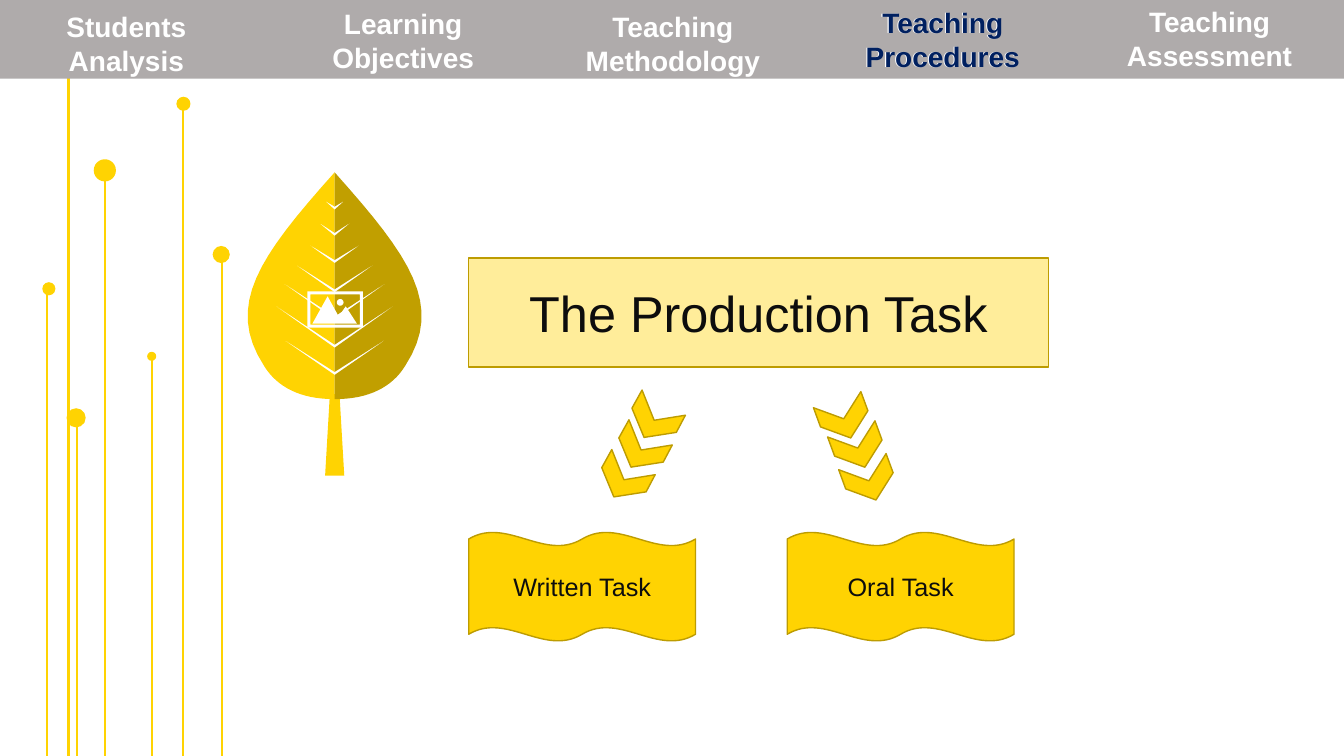
from collections import namedtuple
from math import cos, pi, sin

from lxml import etree
from pptx import Presentation
from pptx.dml.color import RGBColor
from pptx.enum.shapes import MSO_CONNECTOR, MSO_SHAPE
from pptx.enum.text import MSO_ANCHOR, MSO_AUTO_SIZE, PP_ALIGN
from pptx.oxml.ns import qn
from pptx.util import Inches, Pt

STRAIGHT = MSO_CONNECTOR.STRAIGHT
OVAL, BAR = MSO_SHAPE.OVAL, MSO_SHAPE.RECTANGLE
WAVE, STALK = MSO_SHAPE.DOUBLE_WAVE, MSO_SHAPE.TRAPEZOID
CENTER = PP_ALIGN.CENTER
TOP, MIDDLE = MSO_ANCHOR.TOP, MSO_ANCHOR.MIDDLE
NO_FIT = MSO_AUTO_SIZE.NONE

SLIDE_W, SLIDE_H = Inches(13.333), Inches(7.5)
ROWS = 750
UNIT = SLIDE_H / ROWS
COLUMNS = SLIDE_W / UNIT
TITLE_ONLY = 5

YELLOW, DARK_YELLOW, OUTLINE, CREAM = "FFD302", "C19F00", "BD9C01", "FFED9A"
GRAY, WHITE, NAVY, INK = "AFABAB", "FFFFFF", "002060", "0D0D0D"

Box = namedtuple("Box", "left top width height")


def rgb(value):
    return RGBColor.from_string(value)


def emu(*lengths):
    return [round(length * UNIT) for length in lengths]


def paint(shape, fill, line=None):
    shape.fill.solid()
    shape.fill.fore_color.rgb = rgb(fill)
    if line:
        shape.line.color.rgb = rgb(line)
        shape.line.width = Pt(1)
    else:
        shape.line.fill.background()


def write(frame, text, size=18, color=INK, bold=False, anchor=MIDDLE):
    frame.word_wrap = True
    frame.auto_size = NO_FIT
    frame.vertical_anchor = anchor
    frame.text = text
    for paragraph in frame.paragraphs:
        paragraph.alignment = CENTER
        paragraph.font.size = Pt(size)
        paragraph.font.name = "Arial"
        paragraph.font.bold = bold
        paragraph.font.color.rgb = rgb(color)


def add_preset(slide, kind, box, fill, line=None):
    shape = slide.shapes.add_shape(kind, *emu(*box))
    shape.shadow.inherit = False
    paint(shape, fill, line)
    return shape


def add_outline(slide, contours, fill, line=None):
    scaled = [[emu(*point) for point in contour] for contour in contours]
    builder = slide.shapes.build_freeform(*scaled[0][0], scale=1.0)
    for index, (start, *rest) in enumerate(scaled):
        if index:
            builder.move_to(*start)
        builder.add_line_segments(rest, close=True)
    shape = builder.convert_to_shape()
    shape.shadow.inherit = False
    paint(shape, fill, line)


def curve(a, b, c, d, steps=16):
    points = []
    for step in range(1, steps + 1):
        t = step / steps
        weights = (1 - t) ** 3, 3 * t * (1 - t) ** 2, 3 * t * t * (1 - t), t ** 3
        points.append(tuple(sum(w * p[axis] for w, p in zip(weights, (a, b, c, d)))
                            for axis in (0, 1)))
    return points


def shift(points, x, y, side=1):
    return [(x + side * px, y + py) for px, py in points]


def add_stem(slide, x, top, bottom):
    stem = slide.shapes.add_connector(STRAIGHT, *emu(x, top, x, bottom))
    stem.line.color.rgb = rgb(YELLOW)
    stem.line.width = Pt(1.5)
    etree.SubElement(stem._element.spPr, qn("a:effectLst"))


def draw_stems(slide, box):
    add_stem(slide, box.left + 26, box.top, box.top + box.height)
    buds = [(140, 45, 14, 140), (62, 111, 22, 62), (177.5, 194.5, 17, 178),
            (108.5, 295.5, 9, 109), (6.5, 228.5, 13, 5), (33.5, 356.5, 19, 34)]
    for x, y, size, stem_x in buds:
        add_stem(slide, box.left + stem_x, box.top + y, box.top + box.height)
        corner = box.left + x - size / 2, box.top + y - size / 2
        add_preset(slide, OVAL, Box(*corner, size, size), YELLOW)


def draw_leaf(slide, box):
    midrib = box.left + box.width / 2
    add_preset(slide, STALK, Box(midrib - 9.5, box.top + 220, 19, 81), YELLOW)
    veins = [(34, 10, 28), (60, 17, 49), (87, 28, 70), (116, 44, 88),
             (143, 58, 105), (171, 68, 126), (198, 58, 161)]
    half = [(0, 0)]
    for notch, reach, tip in veins:
        half += [(0, notch), (reach, tip), (0, notch + 3)]
    half.append((0, 225))
    half += curve((0, 225), (34, 225), (57, 213), (70, 192))
    half += curve((70, 192), (109, 132), (75, 84), (0, 0))
    for side, color in ((-1, YELLOW), (1, DARK_YELLOW)):
        add_outline(slide, [shift(half, midrib, box.top, side)], color)
    draw_landscape_icon(slide, Box(midrib - 27, box.top + 118, 55, 36))


def draw_landscape_icon(slide, box):
    sun = [(32.5 + 3.3 * cos(k * pi / 12), 11 + 3.3 * sin(k * pi / 12)) for k in range(24)]
    mountains = [(20, 5), (31, 25), (38, 15), (49, 32), (5, 32)]
    frames = [[(m, m), (m, box.height - m), (box.width - m, box.height - m), (box.width - m, m)]
              for m in (3, 0)]
    add_outline(slide, [shift(part, box.left, box.top) for part in (sun, mountains, *frames)],
                WHITE)


def draw_title(slide, box):
    title = slide.shapes.title
    title.left, title.top, title.width, title.height = emu(*box)
    geometry = etree.Element(qn("a:prstGeom"), prst="round2DiagRect")
    etree.SubElement(geometry, qn("a:avLst"))
    title._element.spPr.insert(1, geometry)
    paint(title, CREAM, OUTLINE)
    write(title.text_frame, "The Production Task", size=36)


def draw_chevrons(slide, box):
    left_chevron = [(0, 77), (12, 106), (44, 101), (53, 84), (22, 89), (10, 59)]
    right_chevron = [(235, 79), (265, 90), (282, 63), (289, 82), (272, 109), (242, 98)]
    trails = [(left_chevron, [(0, 0), (17, -29.5), (30, -59)]),
              (right_chevron, [(0, 0), (-11, -32.5), (-25, -61.5)])]
    for chevron, offsets in trails:
        contours = [shift(chevron, box.left + x, box.top + y) for x, y in offsets]
        add_outline(slide, contours, YELLOW, OUTLINE)


def draw_tasks(slide, box):
    width = 225
    tasks = ["Written Task", "Oral Task"]
    for index, task in enumerate(tasks):
        left = box.left + index * (box.width - width)
        banner = add_preset(slide, WAVE, Box(left, box.top, width, box.height), YELLOW, OUTLINE)
        write(banner.text_frame, task)


def draw_header(slide, box):
    add_preset(slide, BAR, box, GRAY)
    step = box.width / 5
    tabs = [("Students\nAnalysis", 0, 5, WHITE), ("Learning Objectives", 1, 2, WHITE),
            ("Teaching Methodology", 2, 5, WHITE), ("Teaching Procedures", 3, 1, WHITE),
            ("Teaching Procedures", 3, 1, NAVY), ("Teaching Assessment", 4, 0, WHITE)]
    for label, column, drop, color in tabs:
        nudge = 1 if color == NAVY else 0
        place = emu(box.left + column * step + nudge, box.top + drop, step + 2 * (column in (2, 3)), 77)
        tab = slide.shapes.add_textbox(*place)
        write(tab.text_frame, label, size=20, color=color, bold=True, anchor=TOP)
        if "\n" in label:
            first = tab.text_frame.paragraphs[0]
            first._p.get_or_add_pPr().set("marR", str(Inches(0.16)))


def main():
    deck = Presentation()
    deck.slide_width, deck.slide_height = SLIDE_W, SLIDE_H
    slide = deck.slides.add_slide(deck.slide_layouts[TITLE_ONLY])
    draw_stems(slide, Box(42, 58, 186, ROWS - 58))
    draw_leaf(slide, Box(245, 171, 174, 301))
    draw_title(slide, Box(465, 256, 575, 108))
    draw_chevrons(slide, Box(597, 387, 289, 109))
    draw_tasks(slide, Box(465, 528, 541, 108))
    draw_header(slide, Box(0, 0, COLUMNS, 78))
    deck.save("out.pptx")


if __name__ == "__main__":
    main()
